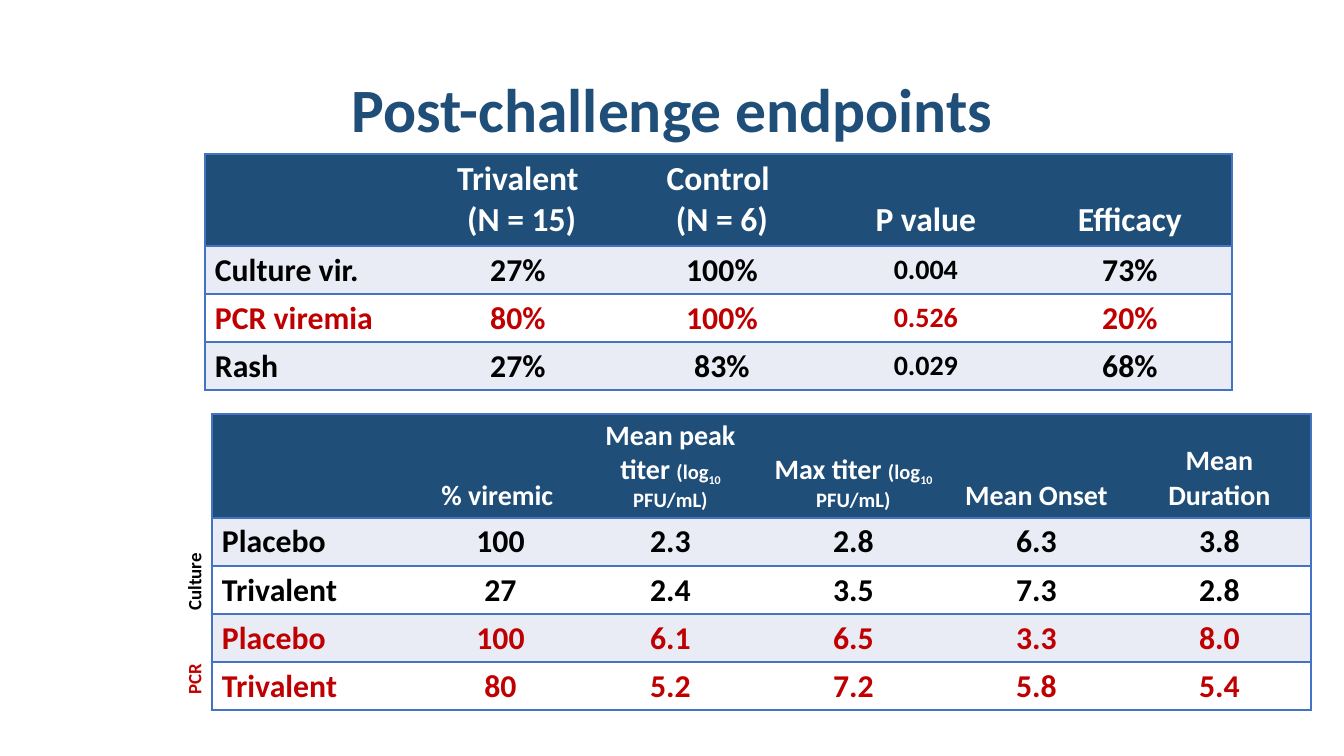
from lxml import etree
from pptx import Presentation
from pptx.dml.color import RGBColor
from pptx.enum.text import MSO_ANCHOR, MSO_AUTO_SIZE, PP_ALIGN
from pptx.oxml.ns import qn
from pptx.util import Pt

PX = 914400 / 134.4
NAVY = RGBColor(0x1F, 0x4E, 0x79)
BORDER = RGBColor(0x44, 0x72, 0xC4)
BAND = RGBColor(0xE9, 0xEB, 0xF5)
WHITE = RGBColor(0xFF, 0xFF, 0xFF)
BLACK = RGBColor(0, 0, 0)
RED = RGBColor(0xC0, 0, 0)
NO_STYLE = "{2D5ABB26-0587-4C30-8999-92F81FD0307C}"

BODY_SIZE = 17
P_VALUE_SIZE = 15
# Each run is (text, size, baseline shift in 1/1000 %)
UNIT = [("(log", 11, 0), ("10", 11, -25000), (" PFU/mL)", 11, 0)]

ENDPOINT_HEADER = ["", "Trivalent\n (N = 15)", "Control \n(N = 6)", "P value", "Efficacy"]
ENDPOINT_ROWS = [
    (BLACK, ["Culture vir.", "27%", "100%", "0.004", "73%"]),
    (RED, ["PCR viremia", "80%", "100%", "0.526", "20%"]),
    (BLACK, ["Rash", "27%", "83%", "0.029", "68%"]),
]
VIREMIA_HEADER = [
    "", "% viremic ",
    [("Mean peak titer ", 15, 0)] + UNIT,
    [("Max titer ", 15, 0)] + UNIT,
    "Mean Onset", "Mean Duration",
]
VIREMIA_ROWS = [
    (BLACK, ["Placebo", "100", "2.3", "2.8", "6.3", "3.8"]),
    (BLACK, ["Trivalent", "27", "2.4", "3.5", "7.3", "2.8"]),
    (RED, ["Placebo", "100", "6.1", "6.5", "3.3", "8.0"]),
    (RED, ["Trivalent", "80", "5.2", "7.2", "5.8", "5.4"]),
]


def px(length):
    return round(length * PX)


def apply(target, values):
    for name, value in values.items():
        setattr(target, name, value)


def write_text(frame, content, size, color, align=PP_ALIGN.CENTER):
    """Write a string, one paragraph a line, or a list of runs."""
    if isinstance(content, str):
        paragraphs = [[(line, size, 0)] for line in content.split("\n")]
    else:
        paragraphs = [content]
    for index, runs in enumerate(paragraphs):
        paragraph = frame.add_paragraph() if index else frame.paragraphs[0]
        paragraph.alignment = align
        for text, run_size, baseline in runs:
            run = paragraph.add_run()
            run.text = text
            apply(run.font, {"name": "Calibri", "size": Pt(run_size), "bold": True})
            run.font.color.rgb = color
            if baseline:
                run.font._element.set("baseline", str(baseline))


def add_borders(cell, sides):
    properties = cell._tc.get_or_add_tcPr()
    for side in sides:
        line = etree.SubElement(properties, qn(f"a:ln{side}"), w=str(Pt(1)))
        fill = etree.SubElement(line, qn("a:solidFill"))
        etree.SubElement(fill, qn("a:srgbClr"), val=str(BORDER))


def format_cell(cell, fill, sides, anchor):
    apply(cell, {
        "margin_left": px(10), "margin_right": px(10),
        "margin_top": px(5), "margin_bottom": px(5),
        "vertical_anchor": anchor,
    })
    add_borders(cell, sides)
    cell.fill.solid()
    cell.fill.fore_color.rgb = fill


def add_results_table(slide, left, top, widths, header_height, header, header_size, rows):
    heights = [header_height] + [47] * len(rows)
    frame = slide.shapes.add_table(len(heights), len(widths), px(left), px(top),
                                   px(sum(widths)), px(sum(heights)))
    table = frame.table
    apply(table, {"first_row": False, "horz_banding": False})
    table._tbl.tblPr.find(qn("a:tableStyleId")).text = NO_STYLE
    for column, width in zip(table.columns, widths):
        column.width = px(width)
    for row, height in zip(table.rows, heights):
        row.height = px(height)

    last = len(widths) - 1
    for r, (color, values) in enumerate([(WHITE, header)] + rows):
        fill = NAVY if r == 0 else BAND if r % 2 else WHITE
        for c, value in enumerate(values):
            size, anchor, align = BODY_SIZE, MSO_ANCHOR.TOP, PP_ALIGN.CENTER
            if r == 0:
                size, anchor = header_size, MSO_ANCHOR.BOTTOM
            elif c == 0:
                align = PP_ALIGN.LEFT
            elif header[c] == "P value":
                size, anchor = P_VALUE_SIZE, MSO_ANCHOR.MIDDLE
            sides = ["L"] * (c == 0) + ["R"] * (c == last) + ["T", "B"]
            cell = table.cell(r, c)
            format_cell(cell, fill, sides, anchor)
            if value:
                write_text(cell.text_frame, value, size, color, align)


def add_title(slide, text):
    frame = slide.shapes.add_textbox(px(93), px(40), px(1158), px(146)).text_frame
    apply(frame, {"word_wrap": True, "vertical_anchor": MSO_ANCHOR.MIDDLE})
    write_text(frame, text, 33, NAVY)
    frame.paragraphs[0].line_spacing = 0.9


def add_method_label(slide, text, center_y, width, color):
    """Add a label that reads upwards beside the viremia table."""
    center_x, height = 194, 36
    box = slide.shapes.add_textbox(px(center_x - width / 2), px(center_y - height / 2),
                                   px(width), px(height))
    box.rotation = 270
    apply(box.text_frame, {"word_wrap": False, "auto_size": MSO_AUTO_SIZE.SHAPE_TO_FIT_TEXT})
    write_text(box.text_frame, text, 10.1, color)


def main():
    presentation = Presentation()
    apply(presentation, {"slide_width": px(1344), "slide_height": px(756)})
    slide = presentation.slides.add_slide(presentation.slide_layouts[6])
    add_title(slide, "Post-challenge endpoints")
    add_results_table(slide, 212, 414, [210, 157] + [183] * 4, 101,
                      VIREMIA_HEADER, 15, VIREMIA_ROWS)
    add_results_table(slide, 205, 154, [211] + [204] * 4, 92,
                      ENDPOINT_HEADER, 18, ENDPOINT_ROWS)
    add_method_label(slide, "Culture", 582, 84, BLACK)
    add_method_label(slide, "PCR", 679, 58, RED)
    presentation.save("out.pptx")


if __name__ == "__main__":
    main()
